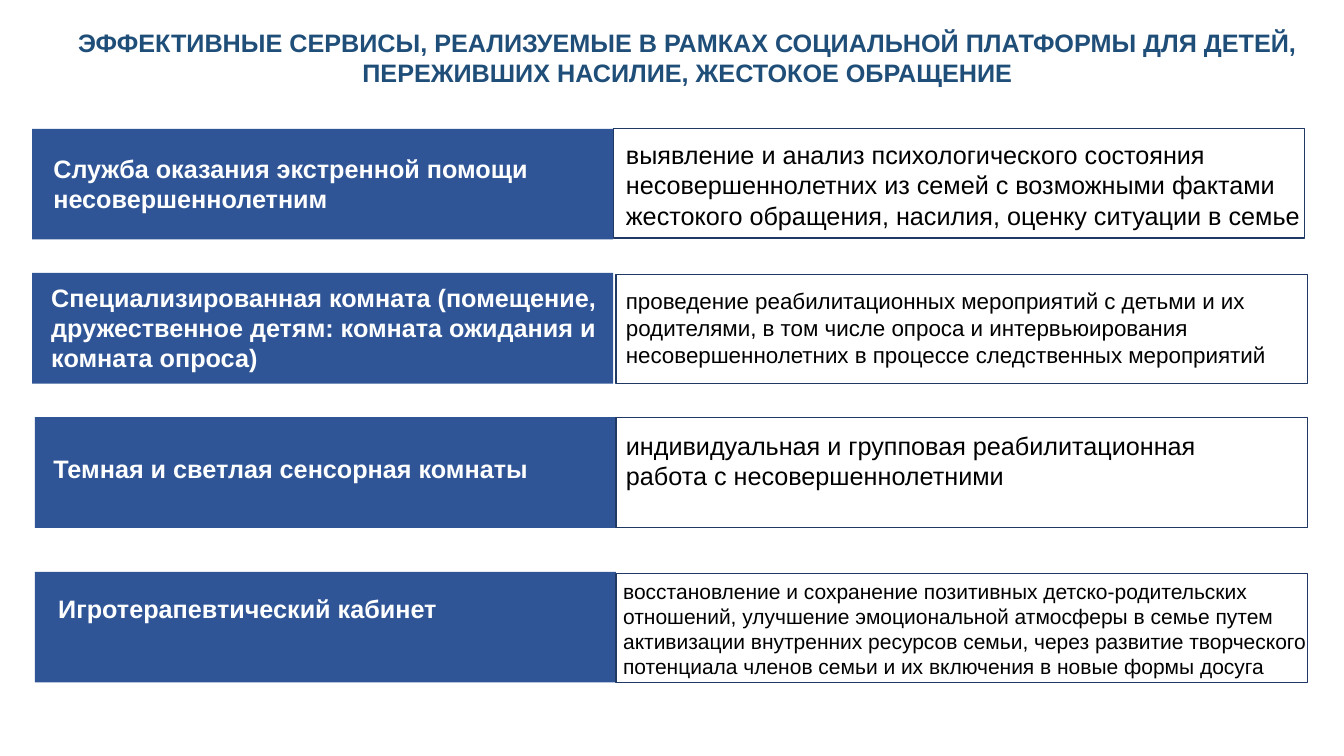
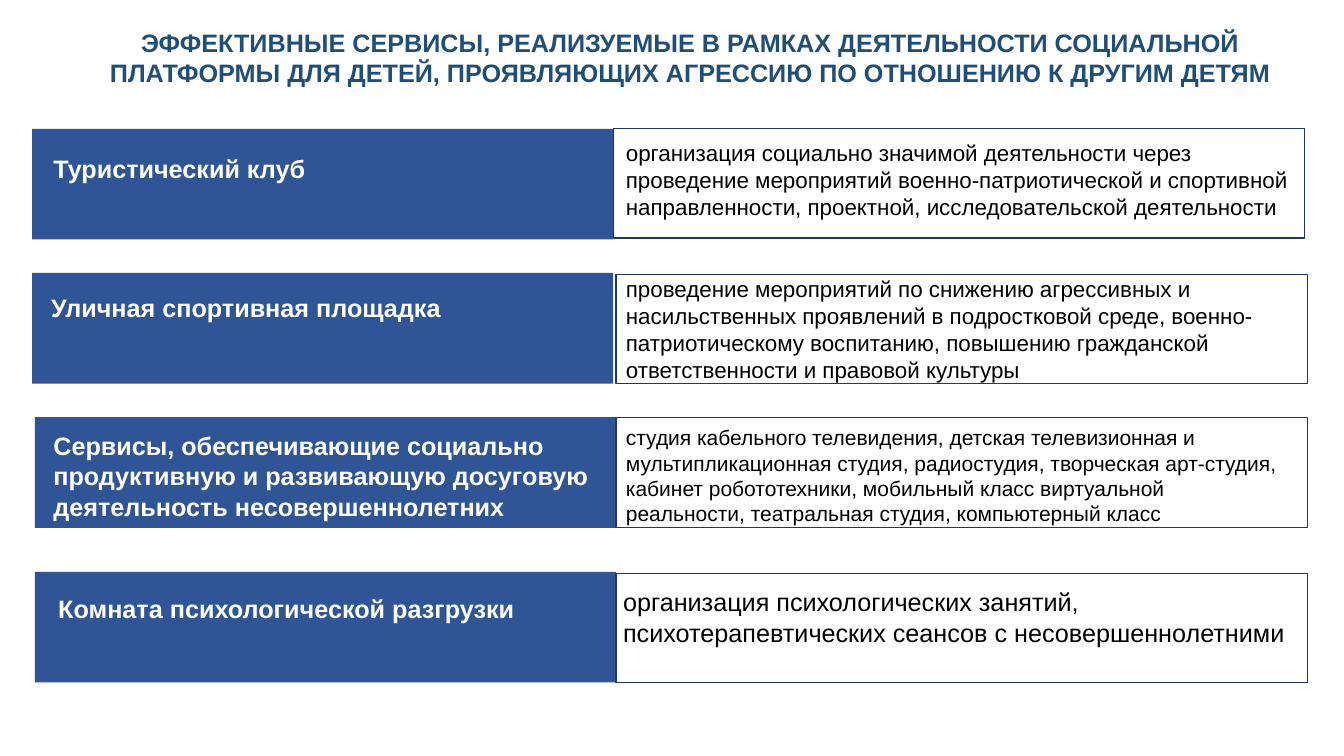
from dataclasses import dataclass

from pptx import Presentation
from pptx.dml.color import RGBColor
from pptx.enum import shapes as sh, text as tx
from pptx.util import Pt


@dataclass(frozen=True)
class Theme:
    font: str = "Arial"
    white: str = "FFFFFF"
    head: str = "1F4E79"
    label: str = "2F5597"
    edge: str = "203864"
    ink: str = "000000"
    large: int = 18
    mid: int = 16
    small: int = 15


@dataclass(frozen=True)
class Box:
    left: float
    top: float
    width: float
    height: float


@dataclass(frozen=True)
class Row:
    """Frames of one service, with the left edges of its two texts."""
    label: Box
    detail: Box
    label_x: float
    detail_x: float
    detail_w: float


@dataclass(frozen=True)
class Note:
    words: str
    top: float
    lines: int
    size: int = Theme.large


@dataclass(frozen=True)
class Page:
    title: str
    width: float
    pairs: tuple[tuple[Note, Note], ...]


THEME = Theme()
LABEL_W, DETAIL_W, ROW_H = 415, 494, 79
LABEL_TEXT_W = 406

ROWS = tuple(
    Row(Box(left, top, LABEL_W, ROW_H), Box(right, top + drop, DETAIL_W, high), *texts)
    for left, top, right, drop, high, texts in (
        (23, 92, 438, 0, 78, (31, 440, 508)),
        (23, 195, 440, 1, 78, (29.5, 440, 508)),
        (25, 298, 440, 0, 79, (31, 440, 481)),
        (25, 408.5, 440, 1, 78, (34.5, 438, 517)),
    )
)

PAGES = (
    Page(
        "ЭФФЕКТИВНЫЕ СЕРВИСЫ, РЕАЛИЗУЕМЫЕ В РАМКАХ СОЦИАЛЬНОЙ ПЛАТФОРМЫ "
        "ДЛЯ ДЕТЕЙ, ПЕРЕЖИВШИХ НАСИЛИЕ, ЖЕСТОКОЕ ОБРАЩЕНИЕ",
        907,
        (
            (Note("Служба оказания экстренной помощи несовершеннолетним", 106, 2),
             Note("выявление и анализ психологического состояния несовершеннолетних "
                  "из семей с возможными фактами жестокого обращения, насилия, "
                  "оценку ситуации в семье", 96, 3)),
            (Note("Специализированная комната (помещение, дружественное детям: "
                  "комната ожидания и комната опроса)", 198, 3),
             Note("проведение реабилитационных мероприятий с детьми и их родителями, "
                  "в том числе опроса и интервьюирования несовершеннолетних "
                  "в процессе следственных мероприятий", 201.5, 3, THEME.mid)),
            (Note("Темная и светлая сенсорная комнаты", 320, 1),
             Note("индивидуальная и групповая реабилитационная работа "
                  "с несовершеннолетними", 304, 2)),
            (Note("Игротерапевтический кабинет", 420.5, 1),
             Note("восстановление и сохранение позитивных детско-родительских "
                  "отношений, улучшение эмоциональной атмосферы в семье путем "
                  "активизации внутренних ресурсов семьи, через развитие творческого "
                  "потенциала членов семьи и их включения в новые формы досуга",
                  409.5, 4, THEME.small)),
        ),
    ),
    Page(
        "ЭФФЕКТИВНЫЕ СЕРВИСЫ, РЕАЛИЗУЕМЫЕ В РАМКАХ ДЕЯТЕЛЬНОСТИ СОЦИАЛЬНОЙ "
        "ПЛАТФОРМЫ ДЛЯ ДЕТЕЙ, ПРОЯВЛЯЮЩИХ АГРЕССИЮ ПО ОТНОШЕНИЮ К ДРУГИМ ДЕТЯМ",
        911,
        (
            (Note("Туристический клуб", 106, 1),
             Note("организация социально значимой деятельности через проведение "
                  "мероприятий военно-патриотической и спортивной направленности, "
                  "проектной, исследовательской деятельности", 96, 3, THEME.mid)),
            (Note("Уличная спортивная площадка", 205, 1),
             Note("проведение мероприятий по снижению агрессивных и насильственных "
                  "проявлений в подростковой среде, военно-патриотическому воспитанию, "
                  "повышению гражданской ответственности и правовой культуры",
                  193, 4, THEME.mid)),
            (Note("Сервисы, обеспечивающие социально продуктивную и развивающую "
                  "досуговую деятельность несовершеннолетних", 304, 3),
             Note("студия кабельного телевидения, детская телевизионная и "
                  "мультипликационная студия, радиостудия, творческая арт-студия, "
                  "кабинет робототехники, мобильный класс виртуальной реальности, "
                  "театральная студия, компьютерный класс", 300, 4, THEME.small)),
            (Note("Комната психологической разгрузки", 420.5, 1),
             Note("организация психологических занятий, психотерапевтических сеансов "
                  "с несовершеннолетними", 415.5, 2)),
        ),
    ),
)


def paint(slide, box: Box, fill: str, edge: str = ""):
    shape = slide.shapes.add_shape(
        sh.MSO_SHAPE.RECTANGLE,
        Pt(box.left), Pt(box.top), Pt(box.width), Pt(box.height))
    shape.shadow.inherit = False
    shape.fill.solid()
    shape.fill.fore_color.rgb = RGBColor.from_string(fill)
    if edge:
        shape.line.color.rgb = RGBColor.from_string(edge)
        shape.line.width = Pt(1)
    else:
        shape.line.fill.background()
    return shape


def style(frame, words: str, size: int, color: str, bold: bool,
          align=tx.PP_ALIGN.LEFT) -> None:
    frame.text = words
    frame.word_wrap = True
    frame.auto_size = tx.MSO_AUTO_SIZE.SHAPE_TO_FIT_TEXT
    frame.vertical_anchor = tx.MSO_ANCHOR.TOP
    for para in frame.paragraphs:
        para.alignment = align
        for run in para.runs:
            run.font.name = THEME.font
            run.font.size = Pt(size)
            run.font.bold = bold
            run.font.color.rgb = RGBColor.from_string(color)


def write(slide, note: Note, left: float, width: float, color: str,
          bold: bool = False) -> None:
    height = note.lines * note.size * 1.2 + 7.2
    area = slide.shapes.add_textbox(Pt(left), Pt(note.top), Pt(width), Pt(height))
    style(area.text_frame, note.words, note.size, color, bold)


def draw(slide, page: Page) -> None:
    title = paint(slide, Box(37.5, 16, page.width, 50), THEME.white)
    style(title.text_frame, page.title, THEME.large, THEME.head, True,
          tx.PP_ALIGN.CENTER)
    for row, (label, detail) in zip(ROWS, page.pairs):
        paint(slide, row.label, THEME.label)
        write(slide, label, row.label_x, LABEL_TEXT_W, THEME.white, True)
        paint(slide, row.detail, THEME.white, THEME.edge)
        write(slide, detail, row.detail_x, row.detail_w, THEME.ink)


def main() -> None:
    deck = Presentation()
    deck.slide_width, deck.slide_height = Pt(960), Pt(540)
    for page in PAGES:
        draw(deck.slides.add_slide(deck.slide_layouts[6]), page)
    deck.save("out.pptx")


if __name__ == "__main__":
    main()
